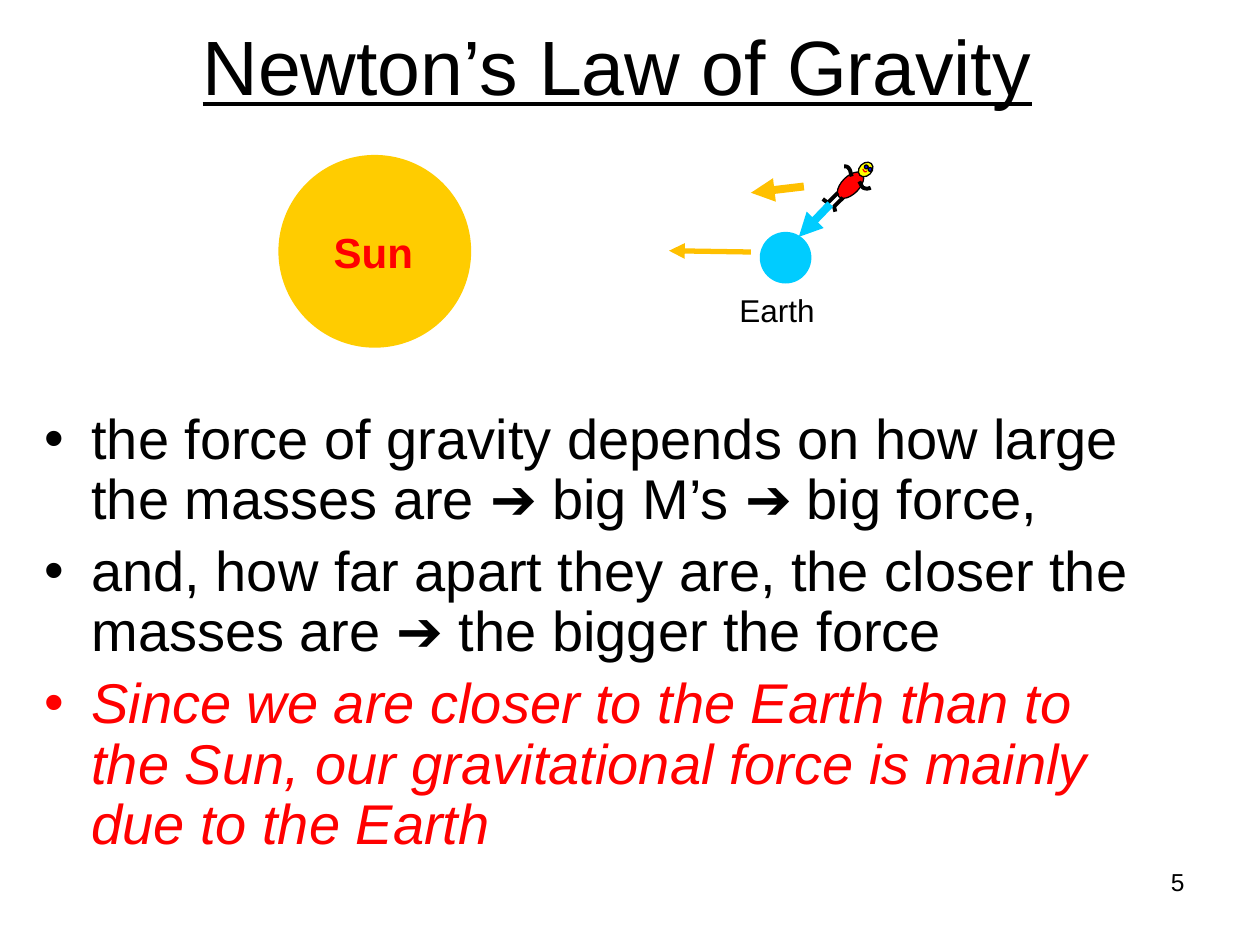
from pptx import Presentation
from pptx import util as u
from pptx.dml.color import RGBColor
from pptx.enum import shapes, text
from pptx.oxml.ns import qn
from lxml import etree

COLUMNS, ROWS = 100, 75
BLACK, RED, YELLOW = "000000", "FF0000", "FFFF00"
SUN, EARTH, PULL, EYE = "FFCC00", "00CCFF", "FFC000", "0000FF"


def colour(hex_text):
    return RGBColor.from_string(hex_text)


def curve(start, *pieces, steps=6):
    """Points along a chain of cubic Bézier pieces."""
    points = [start]
    for b, c, d in pieces:
        a = points[-1]
        for step in range(1, steps + 1):
            t = step / steps
            weights = ((1 - t) ** 3, 3 * t * (1 - t) ** 2, 3 * t * t * (1 - t), t ** 3)
            points.append(tuple(
                sum(w * p[axis] for w, p in zip(weights, (a, b, c, d)))
                for axis in (0, 1)))
    return points


class Board:
    """The current slide, its style and its grid of columns and rows."""
    font = "Arial"

    def __init__(self, presentation):
        self.slide = presentation.slides.add_slide(presentation.slide_layouts[1])
        self.column = presentation.slide_width / COLUMNS
        self.row = presentation.slide_height / ROWS

    def point(self, x, y):
        return round(x * self.column), round(y * self.row)

    def place(self, shape, box):
        shape.left, shape.top = self.point(*box[:2])
        shape.width, shape.height = self.point(*box[2:])

    def format(self, paragraph, size, hex_text=BLACK, **flags):
        for run in paragraph.runs:
            run.font.name, run.font.size = self.font, u.Pt(size)
            run.font.color.rgb = colour(hex_text)
            for name, value in flags.items():
                setattr(run.font, name, value)

    def title(self, words, box):
        shape = self.slide.shapes.title
        self.place(shape, box)
        frame = shape.text_frame
        frame.text = words
        frame.auto_size = text.MSO_AUTO_SIZE.NONE
        frame.vertical_anchor = text.MSO_ANCHOR.MIDDLE
        frame.paragraphs[0].alignment = text.PP_ALIGN.CENTER
        self.format(frame.paragraphs[0], 44, underline=True)

    def bullets(self, lines, box):
        """Fill the body; the last line is the emphasised conclusion."""
        shape = self.slide.placeholders[1]
        self.place(shape, box)
        frame = shape.text_frame
        frame.text = "\n".join(lines)
        frame.auto_size = text.MSO_AUTO_SIZE.NONE
        for paragraph in frame.paragraphs:
            paragraph.line_spacing = 0.9
            self.format(paragraph, 32)
        self.format(frame.paragraphs[-1], 32, RED, italic=True)

    def label(self, words, box, size, hex_text=BLACK, bold=False):
        shape = self.slide.shapes.add_textbox(*self.point(*box[:2]), *self.point(*box[2:]))
        frame = shape.text_frame
        frame.text = words
        frame.word_wrap = False
        frame.auto_size = text.MSO_AUTO_SIZE.SHAPE_TO_FIT_TEXT
        self.format(frame.paragraphs[0], size, hex_text, bold=bold)
        return shape

    def page_number(self, number, box):
        shape = self.label(str(number), box, 14)
        shape.text_frame.word_wrap = True
        shape.text_frame.auto_size = text.MSO_AUTO_SIZE.NONE
        shape.text_frame.paragraphs[0].alignment = text.PP_ALIGN.RIGHT

    def ellipse(self, box, fill, outline=None, rotation=0):
        shape = self.slide.shapes.add_shape(
            shapes.MSO_SHAPE.OVAL, *self.point(*box[:2]), *self.point(*box[2:]))
        shape.shadow.inherit = False
        shape.rotation = rotation
        shape.fill.solid()
        shape.fill.fore_color.rgb = colour(fill)
        if outline:
            shape.line.color.rgb = colour(outline)
            shape.line.width = u.Pt(0.75)
        else:
            shape.line.fill.background()
        return shape

    def stroke(self, points, hex_text, width):
        start, *rest = [self.point(*p) for p in points]
        builder = self.slide.shapes.build_freeform(*start)
        builder.add_line_segments(rest, close=False)
        shape = builder.convert_to_shape()
        shape.shadow.inherit = False
        shape.fill.background()
        shape.line.color.rgb = colour(hex_text)
        shape.line.width = u.Pt(width)
        return shape

    def arrow(self, start, end, hex_text, width):
        connector = self.slide.shapes.add_connector(
            shapes.MSO_CONNECTOR.STRAIGHT, *self.point(*start), *self.point(*end))
        connector.line.color.rgb = colour(hex_text)
        connector.line.width = u.Pt(width)
        etree.SubElement(connector.line._get_or_add_ln(), qn("a:tailEnd"), type="triangle")
        etree.SubElement(connector._element.spPr, qn("a:effectLst"))

    def group(self, *members):
        self.slide.shapes.add_group_shape(members)


def draw_person(board):
    body_parts = [((66.8, 13.4, 1.4, 2.6), RED), ((68.2, 12.8, 1, 1.3), YELLOW),
                  ((68.6, 13.1, 0.3, 0.3), EYE), ((68.9, 13.3, 0.3, 0.3), EYE)]
    smile = curve((68.5, 13.4), ((68.5, 13.5), (68.6, 13.6), (68.6, 13.6)),
                  ((68.7, 13.7), (68.7, 13.6), (68.8, 13.6)))
    arms = [curve((67.6, 14), ((67.5, 13.7), (67.5, 13.5), (67.4, 13.4)),
                  ((67.3, 13.2), (67.1, 13.2), (67, 13.2))),
            curve((68.2, 14.4), ((68.3, 14.6), (68.4, 14.8), (68.5, 14.9)),
                  ((68.7, 15), (68.9, 15), (69.1, 14.9)))]
    legs = [[(66.5, 15.3), (65.7, 16.1), (65.3, 15.8)],
            [(66.9, 15.7), (66.2, 16.4), (66.3, 16.8)]]
    board.group(*[board.ellipse(box, fill, BLACK, 45) for box, fill in body_parts],
                board.stroke(smile, RED, 0.75),
                *[board.stroke(limb, BLACK, 2.25) for limb in arms + legs])


def main():
    presentation = Presentation()
    presentation.slide_width, presentation.slide_height = u.Inches(10), u.Inches(7.5)
    board = Board(presentation)
    board.title("Newton’s Law of Gravity", (4, 0, 90, 10.3))
    board.bullets([
        "the force of gravity depends on how large the masses are ➔ big M’s ➔ big force,",
        "and, how far apart they are, the closer the masses are ➔ the bigger the force",
        "Since we are closer to the Earth than to the Sun, our gravitational force "
        "is mainly due to the Earth",
    ], (2.5, 32.1, 90, 37.4))

    draw_person(board)
    board.arrow((65.9, 16.2), (63.4, 18.8), EARTH, 4.5)
    board.arrow((63.8, 14.8), (59.6, 15.3), PULL, 4.5)
    board.group(board.ellipse((22.1, 12.3, 15.3, 15.3), SUN),
                board.label("Sun", (25.5, 17.5, 8.3, 5), 24, RED, bold=True))
    board.group(board.ellipse((60.3, 18.4, 4.1, 4.1), EARTH),
                board.label("Earth", (57.7, 22.6, 8, 4), 18))
    board.arrow((59.6, 20), (53.1, 19.9), PULL, 3)
    board.page_number(5, (71.7, 68.3, 23.3, 5.2))
    presentation.save("out.pptx")


if __name__ == "__main__":
    main()
